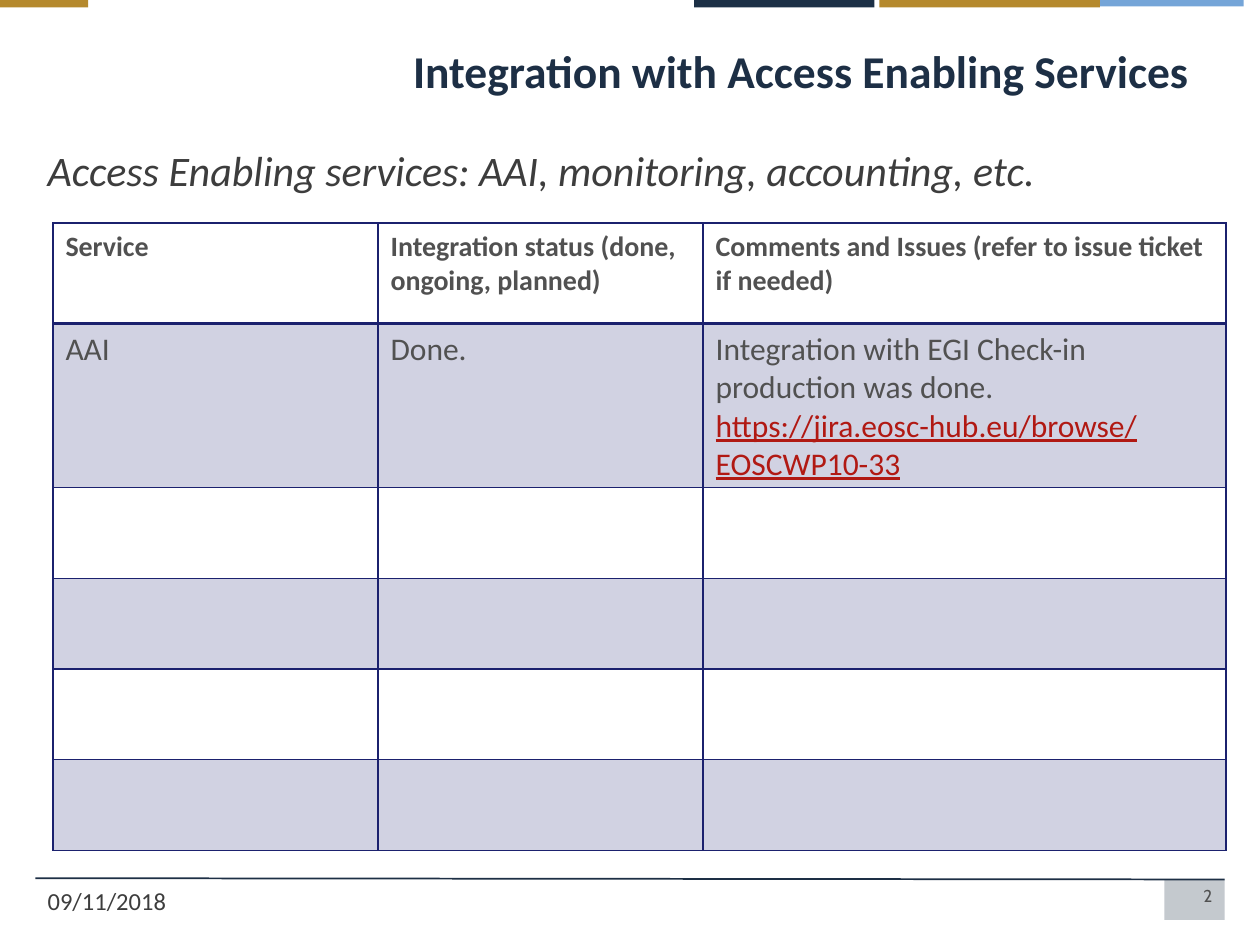
from lxml import etree
from pptx import Presentation
from pptx.dml.color import RGBColor
from pptx.enum.shapes import MSO_CONNECTOR, MSO_SHAPE
from pptx.enum.text import MSO_ANCHOR, PP_ALIGN
from pptx.oxml.ns import qn
from pptx.util import Inches, Pt

LINE = MSO_CONNECTOR.STRAIGHT
RECT = MSO_SHAPE.RECTANGLE
TOP, MIDDLE = MSO_ANCHOR.TOP, MSO_ANCHOR.MIDDLE
LEFT, RIGHT = PP_ALIGN.LEFT, PP_ALIGN.RIGHT

COLORS = {"navy": "1D2F45", "bar_navy": "1C3046", "blue": "75A5D8",
          "gold": "B5892D", "dark": "3D3D3D", "gray": "515151",
          "indigo": "1B216E", "link": "B11913"}

HEADERS = ["Service", "Integration status (done, ongoing, planned)",
           "Comments and Issues (refer to issue ticket if needed)"]
LINK = "https://jira.eosc-hub.eu/browse/EOSCWP10-33"
AAI_ROW = ["AAI", "Done.", "Integration with EGI Check-in production was done."]
COL_WIDTHS = [2.58, 2.58, 4.15]
ROW_HEIGHTS = [0.8] + [0.72] * 5


def rgb(name):
    return RGBColor.from_string(COLORS[name])


def paint(fill, color, alpha=None):
    """Solid fill, with an optional opacity in percent."""
    fill.solid()
    fill.fore_color.rgb = rgb(color)
    if alpha is not None:
        clr = fill._xPr.find(qn("a:solidFill"))[0]
        etree.SubElement(clr, qn("a:alpha"), val=str(alpha * 1000))


def write(p, text, size=18, font="Calibri", color="gray", bold=False,
          italic=False, underline=False, align=LEFT):
    p.alignment = align
    r = p.add_run()
    r.text = text
    f = r.font
    f.size, f.name, f.bold, f.italic = Pt(size), font, bold, italic
    f.underline = underline
    f.color.rgb = rgb(color)


def add_rect(s, x, y, w, h, color, alpha=None):
    sp = s.shapes.add_shape(RECT, Inches(x), Inches(y), Inches(w), Inches(h))
    sp.shadow.inherit = False
    sp.line.fill.background()
    paint(sp.fill, color, alpha)


def add_text(s, x, y, w, h, text, anchor=TOP, **fmt):
    tf = s.shapes.add_textbox(Inches(x), Inches(y), Inches(w), Inches(h)).text_frame
    tf.word_wrap = True
    tf.vertical_anchor = anchor
    write(tf.paragraphs[0], text, **fmt)


def set_borders(cell, top=1, bottom=1):
    """Put the four border lines ahead of the cell's fill."""
    tcPr = cell._tc.get_or_add_tcPr()
    widths = {"a:lnL": 1, "a:lnR": 1, "a:lnT": top, "a:lnB": bottom}
    for i, (tag, width) in enumerate(widths.items()):
        ln = etree.Element(qn(tag), w=str(Pt(width)))
        fill = etree.SubElement(ln, qn("a:solidFill"))
        etree.SubElement(fill, qn("a:srgbClr"), val=COLORS["indigo"])
        tcPr.insert(i, ln)


def add_top_bars(s, y):
    for x, w, h, color in [(5.51, 1.43, 0.06, "bar_navy"), (8.62, 1.25, 0.05, "blue"),
                           (6.98, 1.75, 0.06, "gold"), (0, 0.7, 0.06, "gold")]:
        add_rect(s, x, y, w, h, color)


def add_footer(s, x, y, w):
    right = x + w
    rule = s.shapes.add_connector(LINE, Inches(right), Inches(y),
                                  Inches(x), Inches(y - 0.01))
    rule.line.color.rgb = rgb("navy")
    rule.line.width = Pt(1)
    etree.SubElement(rule._element.spPr, qn("a:effectLst"))
    add_rect(s, right - 0.48, y, 0.48, 0.32, "navy", alpha=26)
    add_text(s, right - 2.56, y, 2.56, 0.31, "2", size=9.8, font="Cabin", align=RIGHT)
    add_text(s, x, y, 2.33, 0.31, "09/11/2018", size=14, color="dark")


def add_status_table(s, x, y, w, h):
    table = s.shapes.add_table(len(ROW_HEIGHTS), len(COL_WIDTHS), Inches(x),
                               Inches(y), Inches(w), Inches(h)).table
    table.first_row = table.horz_banding = False
    for col, width in zip(table.columns, COL_WIDTHS):
        col.width = Inches(width)
    for row, height in zip(table.rows, ROW_HEIGHTS):
        row.height = Inches(height)

    # Banding and grid, with a heavier rule under the header
    for i, row in enumerate(table.rows):
        for cell in row.cells:
            if i % 2:
                paint(cell.fill, "indigo", alpha=20)
            else:
                cell.fill.background()
            set_borders(cell, top=2 if i == 1 else 1, bottom=2 if i == 0 else 1)

    # Wording
    for j, (header, text) in enumerate(zip(HEADERS, AAI_ROW)):
        write(table.cell(0, j).text_frame.paragraphs[0], header, size=16, bold=True)
        write(table.cell(1, j).text_frame.paragraphs[0], text)
    write(table.cell(1, 2).text_frame.add_paragraph(), LINK, color="link", underline=True)


def main():
    prs = Presentation()
    prs.slide_width, prs.slide_height = Inches(10), Inches(7.5)
    s = prs.slides.add_slide(prs.slide_layouts[6])
    add_top_bars(s, 0)
    add_footer(s, 0.28, 6.98, 9.44)
    add_text(s, 0.28, 1.1, 9.45, 0.82,
             "Access Enabling services: AAI, monitoring, accounting, etc.",
             size=24, color="dark", italic=True)
    add_text(s, 3.18, 0.28, 6.54, 0.55, "Integration with Access Enabling Services",
             anchor=MIDDLE, size=26, color="navy", bold=True)
    add_status_table(s, 0.42, 1.77, sum(COL_WIDTHS), sum(ROW_HEIGHTS))
    prs.save("out.pptx")


if __name__ == "__main__":
    main()
